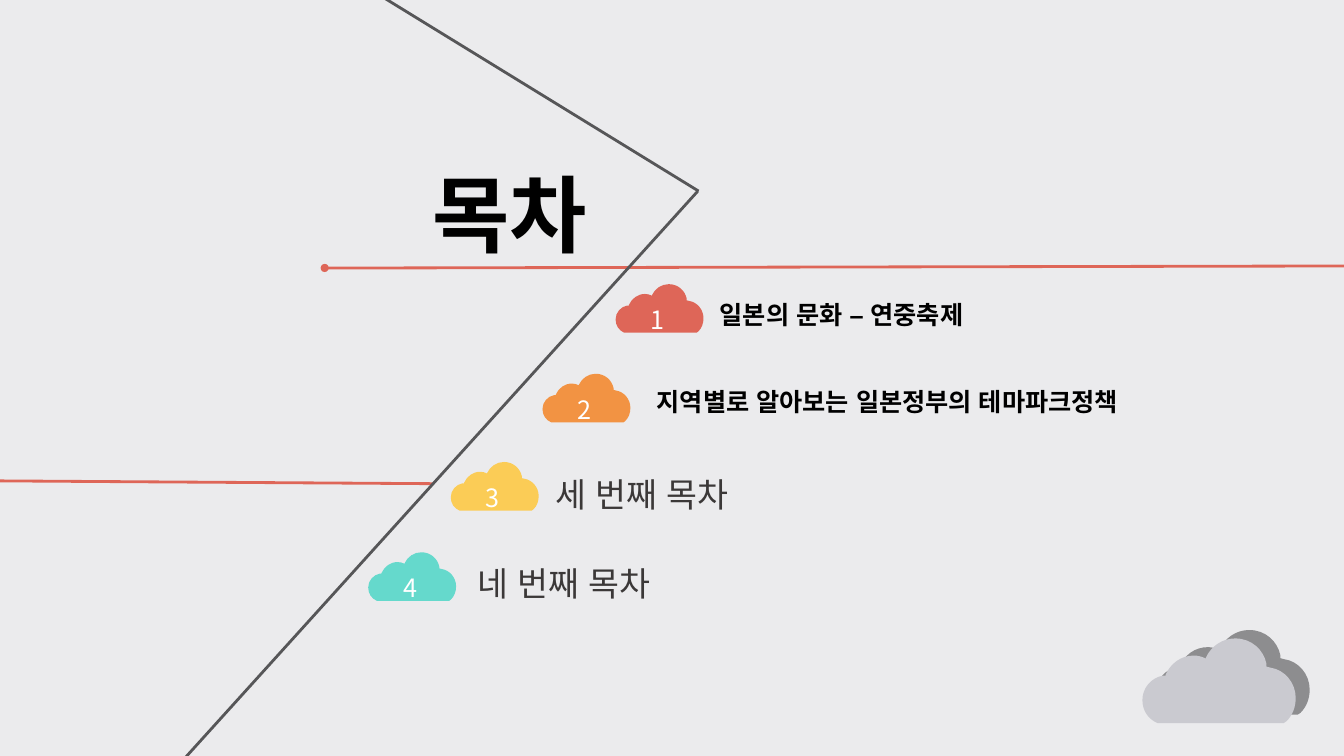
from dataclasses import dataclass

from lxml.etree import SubElement
from pptx import Presentation
from pptx.dml.color import RGBColor
from pptx.enum.shapes import MSO_CONNECTOR as Connector, MSO_SHAPE as Preset
from pptx.enum.text import MSO_ANCHOR as Anchor, MSO_AUTO_SIZE as AutoSize, PP_ALIGN as Align
from pptx.oxml.ns import qn
from pptx.util import Pt


@dataclass(frozen=True)
class Theme:
    background: str = "EBEBED"
    accent: str = "DE6658"
    road: str = "565658"
    black: str = "000000"
    muted: str = "3B3838"
    white: str = "FFFFFF"
    front_cloud: str = "CACAD0"
    back_cloud: str = "8D8D8F"
    title_font: str = "Arial"
    body_font: str = "Noto Sans CJK KR"
    east_asian_font: str = "Arial"
    title_size: int = 60
    plain_size: int = 24
    small_size: int = 18


THEME = Theme()
TITLE_ONLY = 5

# Cloud outline on a 152 by 84 grid: one point is a straight edge, three are a curve.
CLOUD_WIDTH = 152
CLOUD_START = (92, 0)
CLOUD_SEGMENTS = [
    [(108, 0), (120, 11), (123, 25)],
    [(123, 28)],
    [(127, 29)],
    [(141, 31), (152, 44), (152, 59)],
    [(152, 68), (149, 76), (143, 82)],
    [(140, 84)],
    [(16, 84)],
    [(15, 84)],
    [(6, 80), (0, 72), (0, 61)],
    [(0, 49), (9, 39), (20, 37)],
    [(23, 37)],
    [(23, 36)],
    [(28, 25), (38, 17), (51, 17)],
    [(55, 17), (59, 18), (63, 20)],
    [(63, 19)],
    [(68, 8), (79, 0), (92, 0)],
]
SMALL_CLOUD, LARGE_CLOUD = 62.8, 109.5

# Cloud corner, cloud colour, label, label box (left, top, width, height), size, colour, bold
ITEMS = [
    ((439.7, 203), "DE6658", "일본의 문화 – 연중축제", (507, 210, 207, 29),
     THEME.small_size, THEME.black, True),
    ((387.5, 267), "F29343", "지역별로 알아보는 일본정부의 테마파크정책", (462, 272.5, 380, 29),
     THEME.small_size, THEME.black, True),
    ((322, 330), "FBCC56", "세 번째 목차", (389.5, 335, 153, 36),
     THEME.plain_size, THEME.muted, False),
    ((263, 394.5), "65D9CC", "네 번째 목차", (334, 398.4, 154, 36),
     THEME.plain_size, THEME.muted, False),
]


def rgb(color):
    return RGBColor.from_string(color)


def paint(shape, color):
    shape.fill.solid()
    shape.fill.fore_color.rgb = rgb(color)
    shape.line.fill.background()
    shape.shadow.inherit = False


def write(shape, text, size, color, bold=False, typeface=THEME.body_font):
    frame = shape.text_frame
    frame.text = text
    frame.vertical_anchor = Anchor.TOP
    paragraph = frame.paragraphs[0]
    paragraph.alignment = Align.LEFT
    run = paragraph.runs[0]
    run.font.size, run.font.bold, run.font.name = Pt(size), bold, typeface
    run.font.color.rgb = rgb(color)
    east_asian = SubElement(run._r.get_or_add_rPr(), qn("a:ea"))
    east_asian.set("typeface", THEME.east_asian_font)


def add_text(slide, text, box, size, color, bold=False, wrap=True):
    textbox = slide.shapes.add_textbox(*map(Pt, box))
    write(textbox, text, size, color, bold)
    textbox.text_frame.word_wrap = wrap
    textbox.text_frame.auto_size = AutoSize.SHAPE_TO_FIT_TEXT


def add_title(slide, text, box):
    title = slide.shapes.title
    title.left, title.top, title.width, title.height = map(Pt, box)
    write(title, text, THEME.title_size, THEME.black, True, THEME.title_font)
    title.text_frame.auto_size = AutoSize.NONE


def add_line(slide, start, end, color):
    line = slide.shapes.add_connector(Connector.STRAIGHT, *map(Pt, start + end))
    line.line.color.rgb = rgb(color)
    line.line.width = Pt(2)
    SubElement(line._element.spPr, qn("a:effectLst"))


def bend(edge, points):
    """Turn a straight path edge into a cubic curve through the given points."""
    edge.tag = qn("a:cubicBezTo")
    edge.clear()
    for x, y in points:
        point = SubElement(edge, qn("a:pt"))
        point.set("x", str(x))
        point.set("y", str(y))


def add_cloud(slide, left, top, width, color):
    builder = slide.shapes.build_freeform(*CLOUD_START, scale=Pt(width) / CLOUD_WIDTH)
    builder.add_line_segments([segment[-1] for segment in CLOUD_SEGMENTS], close=True)
    cloud = builder.convert_to_shape(Pt(left), Pt(top))
    edges = list(cloud._element.iter(qn("a:lnTo")))
    for edge, segment in zip(edges, CLOUD_SEGMENTS):
        if len(segment) == 3:
            bend(edge, segment)
    paint(cloud, color)


def add_item(slide, number, corner, cloud_color, label, box, size, color, bold):
    left, top = corner
    add_cloud(slide, left, top, SMALL_CLOUD, cloud_color)
    add_text(slide, str(number), (left + 18, top + 10.8, 25, 29),
             THEME.small_size, THEME.white, wrap=False)
    add_text(slide, label, box, size, color, bold)


def main():
    deck = Presentation()
    deck.slide_width, deck.slide_height = Pt(960), Pt(540)
    slide = deck.slides.add_slide(deck.slide_layouts[TITLE_ONLY])
    slide.background.fill.solid()
    slide.background.fill.fore_color.rgb = rgb(THEME.background)

    add_title(slide, " 목차", (285, 112.3, 176, 80))
    add_line(slide, (232, 191.5), (960, 190), THEME.accent)
    add_line(slide, (-2, 343.5), (309.5, 345.5), THEME.accent)
    add_line(slide, (263, -8.5), (499, 136.5), THEME.road)
    add_line(slide, (128, 546), (498.5, 136.5), THEME.road)
    dot = slide.shapes.add_shape(Preset.OVAL, Pt(229), Pt(188.5), Pt(5.8), Pt(5.8))
    paint(dot, THEME.accent)

    add_cloud(slide, 826, 450, LARGE_CLOUD, THEME.back_cloud)
    add_cloud(slide, 816, 456, LARGE_CLOUD, THEME.front_cloud)
    for number, item in enumerate(ITEMS, start=1):
        add_item(slide, number, *item)
    deck.save("out.pptx")


if __name__ == "__main__":
    main()
